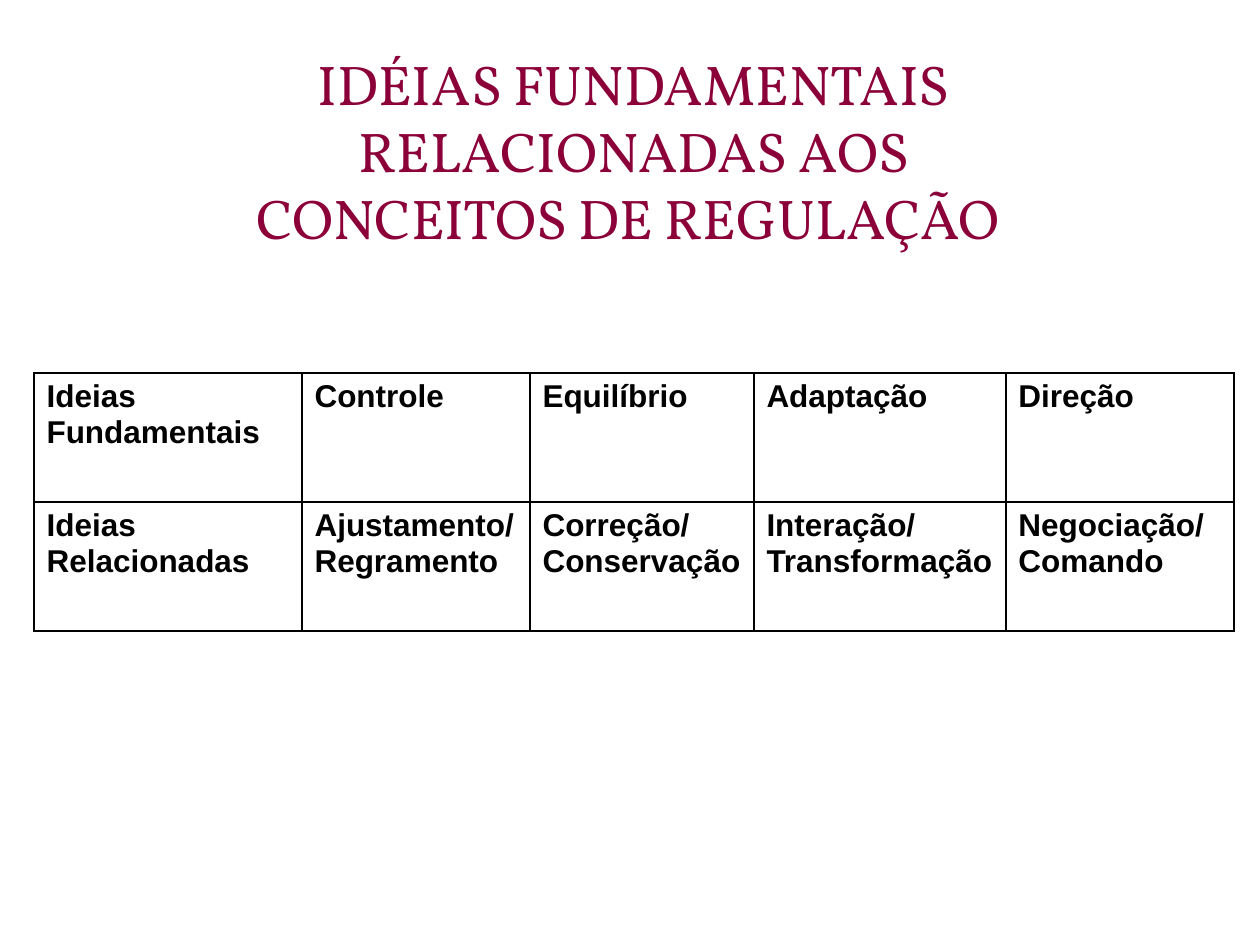
from lxml import etree
from pptx import Presentation
from pptx.dml.color import RGBColor
from pptx.enum.text import MSO_ANCHOR, PP_ALIGN
from pptx.oxml.ns import qn
from pptx.util import Pt

PX = 914400 // 126
MIDDLE = MSO_ANCHOR.MIDDLE
CENTER = PP_ALIGN.CENTER
BLACK, WHITE, WINE = "000000", "FFFFFF", "8C0039"

TITLE = "IDÉIAS FUNDAMENTAIS RELACIONADAS AOS CONCEITOS DE REGULAÇÃO "
WIDTHS = [268, 228, 224, 252, 228]
ROWS = [
    ["Ideias Fundamentais", "Controle", "Equilíbrio", "Adaptação", "Direção"],
    ["Ideias Relacionadas", "Ajustamento/ Regramento", "Correção/\nConservação",
     "Interação/\nTransformação", "Negociação/\nComando"],
]


def paint(color, hue):
    color.rgb = RGBColor.from_string(hue)


def style(font, name, size, hue, bold=False):
    font.name, font.size, font.bold = name, Pt(size), bold
    paint(font.color, hue)


def add_title(slide, x, y, w, h):
    title = slide.shapes.title
    title.left, title.top, title.width, title.height = (v * PX for v in (x, y, w, h))
    frame = title.text_frame
    frame.text = TITLE
    frame.word_wrap = True
    frame.vertical_anchor = MIDDLE
    par = frame.paragraphs[0]
    par.alignment = CENTER
    style(par.runs[0].font, "Vollkorn", 32, WINE)


def add_borders(cell):
    props = cell._tc.get_or_add_tcPr()
    for spot, side in enumerate(("a:lnL", "a:lnR", "a:lnT", "a:lnB")):
        line = etree.Element(qn(side), w=str(Pt(1)))
        fill = etree.SubElement(line, qn("a:solidFill"))
        etree.SubElement(fill, qn("a:srgbClr"), val=BLACK)
        props.insert(spot, line)


def fill_cell(cell, text):
    cell.text = text
    cell.fill.solid()
    paint(cell.fill.fore_color, WHITE)
    add_borders(cell)
    for par in cell.text_frame.paragraphs:
        for run in par.runs:
            style(run.font, "Arial", 18, BLACK, True)


def add_ideas(slide, x, y, w, h):
    """Draw the table of ideas, its columns sharing w by WIDTHS."""
    table = slide.shapes.add_table(
        len(ROWS), len(WIDTHS), x * PX, y * PX, w * PX, h * PX).table
    for col, part in zip(table.columns, WIDTHS):
        col.width = w * part * PX // sum(WIDTHS)
    for r, row in enumerate(ROWS):
        table.rows[r].height = h * PX // len(ROWS)
        for c, text in enumerate(row):
            fill_cell(table.cell(r, c), text)


def main():
    deck = Presentation()
    deck.slide_width, deck.slide_height = 1260 * PX, 945 * PX
    slide = deck.slides.add_slide(deck.slide_layouts[5])
    slide.background.fill.solid()
    paint(slide.background.fill.fore_color, WHITE)
    add_title(slide, 193, 66, 882, 168)
    add_ideas(slide, 34, 373, 1200, 258)
    deck.save("out.pptx")


if __name__ == "__main__":
    main()
